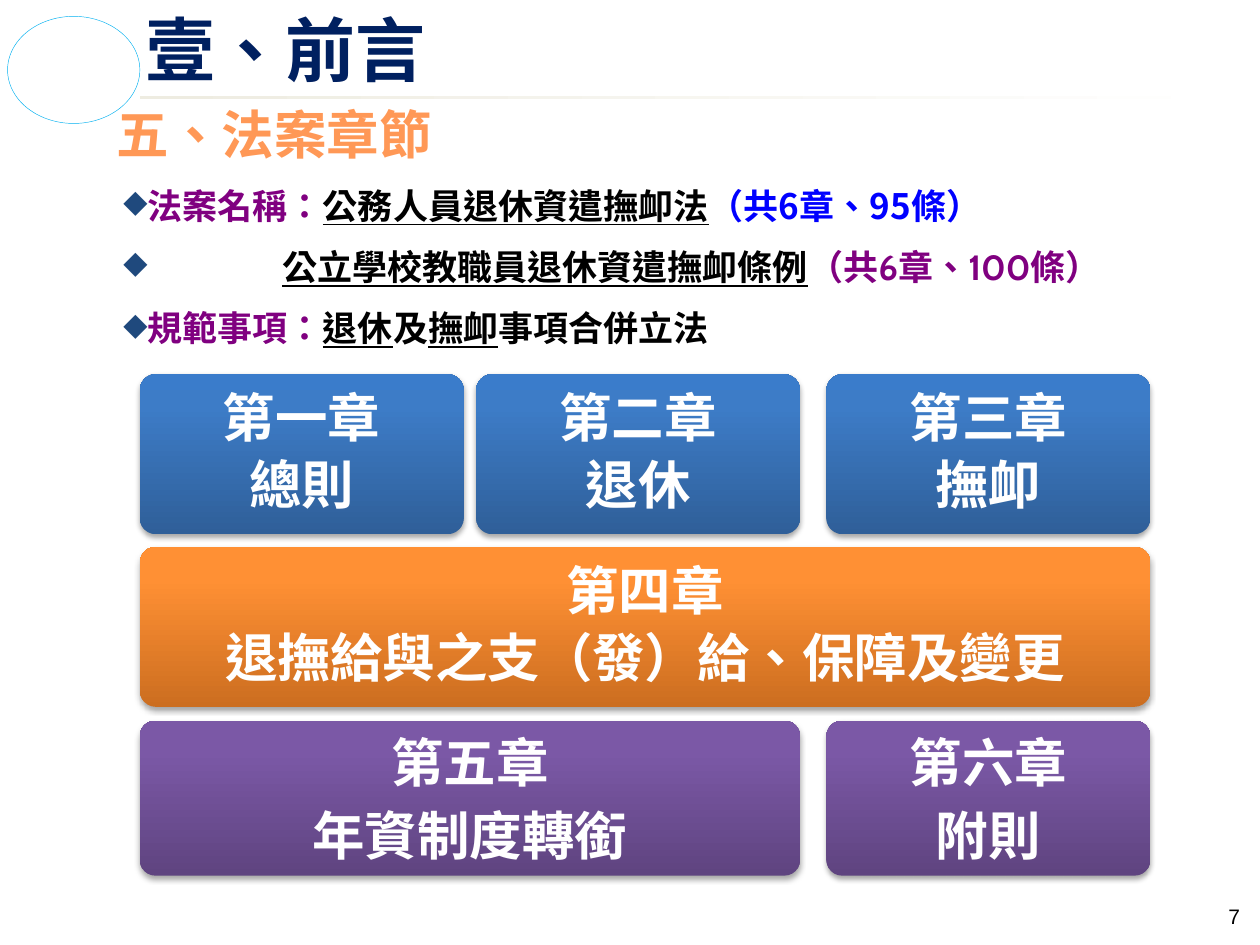
from lxml.etree import SubElement
from pptx import Presentation
from pptx.dml.color import RGBColor
from pptx.enum.shapes import MSO_SHAPE as Shape
from pptx.enum.text import MSO_ANCHOR as Anchor, PP_ALIGN as Align
from pptx.oxml.ns import qn
from pptx.util import Inches, Pt

BLACK = RGBColor(0x00, 0x00, 0x00)
WHITE = RGBColor(0xFF, 0xFF, 0xFF)
NAVY = RGBColor(0x00, 0x20, 0x60)
CYAN = RGBColor(0x00, 0xB0, 0xF0)
PURPLE = RGBColor(0x80, 0x00, 0x80)
BLUE = RGBColor(0x00, 0x00, 0xFF)
BULLET = RGBColor(0x1F, 0x49, 0x7D)


def ramp(*stops):
    return [(position, RGBColor.from_string(color)) for position, color in stops]


RULE_RAMP = ramp((0, "EEECE1"), (100, "FFFFFF"))
HEADING_RAMP = ramp((0, "9D4700"), (78, "FF9856"), (100, "FFF5F1"))
BLUE_RAMP = ramp((0, "2F5F99"), (80, "3D7CC7"), (100, "3A7CCB"))
ORANGE_RAMP = ramp((0, "CC6E20"), (80, "FF9034"), (100, "FF9136"))
PURPLE_RAMP = ramp((0, "5F4480"), (80, "7B58A6"), (100, "7C57A8"))

CJK = "Noto Sans CJK SC"
COLUMNS, COLUMN_WIDTH = (1.11, 3.78, 6.56), 2.57
# top, height, line spacing, gradient, chapters as (first column, last column, lines)
CHAPTER_ROWS = [
    (2.97, 1.27, 0.9, BLUE_RAMP, [(0, 0, ("第一章", "總則")),
                                  (1, 1, ("第二章", "退休")),
                                  (2, 2, ("第三章", "撫卹"))]),
    (4.34, 1.27, 0.9, ORANGE_RAMP,
     [(0, 2, ("第四章", "退撫給與之支（發）給、保障及變更"))]),
    (5.72, 1.23, None, PURPLE_RAMP, [(0, 1, ("第五章", "年資制度轉銜")),
                                     (2, 2, ("第六章", "附則"))]),
]

LABEL = {"color": PURPLE}
NAME = {"color": BLACK, "underline": True}
PLAIN = {"color": BLACK}
# text indent, hanging indent, runs
BILL_ITEMS = [
    (0.29, 0, [("法案名稱：", LABEL), ("公務人員退休資遣撫卹法", NAME),
               ("（共6章、95條）", {"color": BLUE, "name": CJK})]),
    (1.55, -1.26, [("公立學校教職員退休資遣撫卹條例", NAME),
                   ("（共6章、100條）", LABEL)]),
    (0.29, 0, [("規範事項：", LABEL), ("退休", NAME), ("及", PLAIN),
               ("撫卹", NAME), ("事項合併立法", PLAIN)]),
]


def set_attributes(target, values):
    for key, value in values.items():
        setattr(target, key, value)


def set_gradient(fill, owner, stops, angle):
    """Give fill, held by the XML element owner, any number of stops."""
    fill.gradient()
    fill.gradient_angle = angle
    stop_list = owner.find(".//" + qn("a:gsLst"))
    for stop in list(stop_list):
        stop_list.remove(stop)
    for position, color in stops:
        stop = SubElement(stop_list, qn("a:gs"), pos=str(position * 1000))
        SubElement(stop, qn("a:srgbClr"), val=str(color))


def add_run(paragraph, text, color=None, **font_values):
    run = paragraph.add_run()
    run.text = text
    set_attributes(run.font, font_values)
    if color is not None:
        run.font.color.rgb = color
    properties = run.font._element
    properties.set("lang", "zh-TW")
    latin = properties.find(qn("a:latin"))
    east_asian = SubElement(properties, qn("a:ea"), typeface=CJK)
    latin.addnext(east_asian)
    return run


def add_text(slide, box, **frame_values):
    frame = slide.shapes.add_textbox(*map(Inches, box)).text_frame
    set_attributes(frame, {"word_wrap": True, **frame_values})
    return frame


def add_plain_shape(slide, kind, box):
    shape = slide.shapes.add_shape(kind, *map(Inches, box))
    shape.shadow.inherit = False
    shape.line.fill.background()
    return shape


def add_header(slide, box):
    left, top, width, height = box
    rule = add_plain_shape(slide, Shape.RECTANGLE, (left + 0.05, 0.76, 8.77, 0.03))
    set_gradient(rule.fill, rule._element.spPr, RULE_RAMP, 0)

    ring = add_plain_shape(slide, Shape.OVAL, (0.06, 0.13, 1.05, 0.85))
    ring.fill.background()
    ring.line.color.rgb = CYAN
    ring.line.width = Pt(0.25)

    title = add_text(slide, box, vertical_anchor=Anchor.MIDDLE)
    add_run(title.paragraphs[0], "壹、前言", NAVY, name=CJK, size=Pt(40), bold=True)


def add_section_heading(slide, box):
    heading = add_text(slide, box)
    run = add_run(heading.paragraphs[0], "五、法案章節", name=CJK, size=Pt(30), bold=True)
    set_gradient(run.font.fill, run.font._element, HEADING_RAMP, 270)


def add_diamond_bullet(paragraph, indent, hanging):
    properties = paragraph._p.get_or_add_pPr()
    properties.set("marL", str(Inches(indent)))
    properties.set("indent", str(Inches(hanging)))
    color = SubElement(properties, qn("a:buClr"))
    SubElement(color, qn("a:srgbClr"), val=str(BULLET))
    SubElement(properties, qn("a:buSzPct"), val="90000")
    SubElement(properties, qn("a:buChar"), char="◆")


def add_bill_list(slide, box):
    frame = add_text(slide, box, margin_left=0, margin_top=0,
                     margin_right=0, margin_bottom=0)
    for index, (indent, hanging, runs) in enumerate(BILL_ITEMS):
        paragraph = frame.add_paragraph() if index else frame.paragraphs[0]
        add_diamond_bullet(paragraph, indent, hanging)
        paragraph.line_spacing = Pt(35)
        for text, style in runs:
            add_run(paragraph, text, **{"name": "Cabin", "size": Pt(20),
                                        "bold": True, **style})


def add_soft_shadow(shape):
    effects = shape._element.spPr.find(qn("a:effectLst"))
    shadow = SubElement(effects, qn("a:outerShdw"), blurRad=str(Pt(3.1)),
                        dist=str(Pt(1.8)), dir="5400000", rotWithShape="0")
    color = SubElement(shadow, qn("a:srgbClr"), val=str(BLACK))
    SubElement(color, qn("a:alpha"), val="35000")


def add_chapter(slide, box, lines, stops, line_spacing):
    card = add_plain_shape(slide, Shape.ROUNDED_RECTANGLE, box)
    card.adjustments[0] = 0.1
    set_gradient(card.fill, card._element.spPr, stops, 90)
    add_soft_shadow(card)
    frame = card.text_frame
    margins = {f"margin_{side}": Inches(0.25)
               for side in ("left", "top", "right", "bottom")}
    set_attributes(frame, {"word_wrap": True, "vertical_anchor": Anchor.MIDDLE, **margins})
    for index, line in enumerate(lines):
        paragraph = frame.add_paragraph() if index else frame.paragraphs[0]
        set_attributes(paragraph, {"alignment": Align.CENTER, "space_after": Pt(6),
                                   "line_spacing": line_spacing})
        add_run(paragraph, line, WHITE, name="Calibri", size=Pt(30), bold=True)


def add_chapter_grid(slide):
    for top, height, line_spacing, stops, chapters in CHAPTER_ROWS:
        for first, last, lines in chapters:
            left = COLUMNS[first]
            width = COLUMNS[last] + COLUMN_WIDTH - left
            add_chapter(slide, (left, top, width, height), lines, stops, line_spacing)


def add_page_number(slide, box):
    paragraph = add_text(slide, box).paragraphs[0]
    paragraph.alignment = Align.RIGHT
    add_run(paragraph, "7", BLACK, name="Arial", size=Pt(12))


def main():
    deck = Presentation()
    deck.slide_width, deck.slide_height = Inches(10), Inches(7.5)
    slide = deck.slides.add_slide(deck.slide_layouts[6])
    add_header(slide, (1.06, 0.03, 8.59, 0.71))
    add_section_heading(slide, (0.83, 0.76, 8.54, 0.64))
    add_bill_list(slide, (0.69, 1.31, 8.9, 1.5))
    add_chapter_grid(slide)
    add_page_number(slide, (9.49, 7.12, 0.45, 0.36))
    deck.save("out.pptx")


if __name__ == "__main__":
    main()
